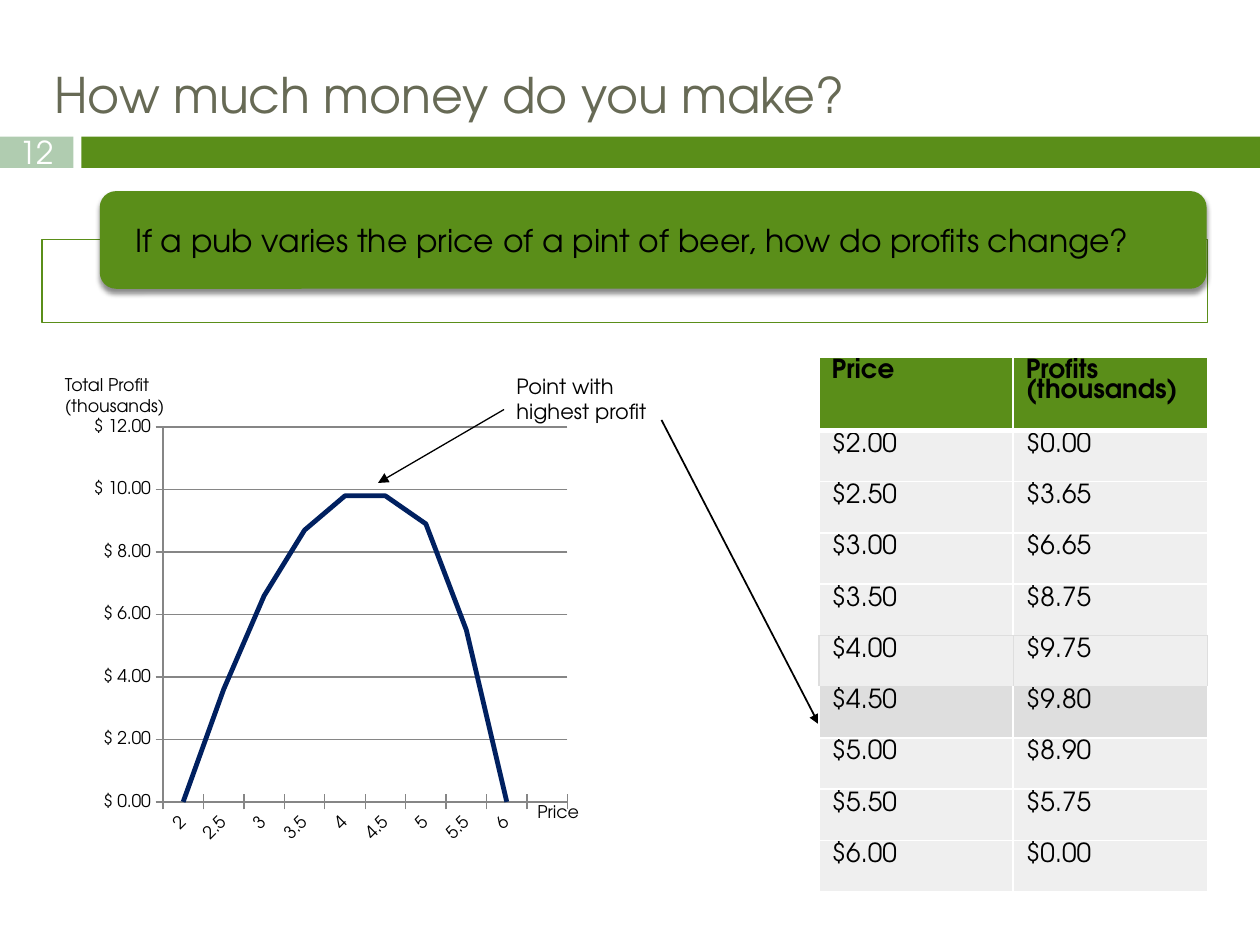
from dataclasses import dataclass

from lxml import etree
from pptx import Presentation
from pptx.chart.data import CategoryChartData
from pptx.dml.color import RGBColor
from pptx.enum.chart import XL_CHART_TYPE, XL_TICK_MARK
from pptx.enum.shapes import MSO_CONNECTOR, MSO_SHAPE
from pptx.enum.text import MSO_ANCHOR, MSO_AUTO_SIZE, PP_ALIGN
from pptx.oxml.ns import qn
from pptx.util import Pt

RECTANGLE, ROUNDED = MSO_SHAPE.RECTANGLE, MSO_SHAPE.ROUNDED_RECTANGLE
MIDDLE, TOP = MSO_ANCHOR.MIDDLE, MSO_ANCHOR.TOP
LEFT, CENTER = PP_ALIGN.LEFT, PP_ALIGN.CENTER
GROW = MSO_AUTO_SIZE.SHAPE_TO_FIT_TEXT
STRAIGHT = MSO_CONNECTOR.STRAIGHT
CROSS = XL_TICK_MARK.CROSS
LINE_CHART = XL_CHART_TYPE.LINE
TITLE_ONLY = 5
DOLLARS = '"$"\\ #,##0.00'


@dataclass(frozen=True)
class Theme:
    font: str = "TeX Gyre Adventor"
    green: str = "5A8E19"
    sage: str = "B0CCB0"
    olive: str = "676A55"
    navy: str = "002060"
    white: str = "FFFFFF"
    black: str = "000000"
    grid: str = "868686"
    cell: str = "EFEFEF"
    highlight: str = "DEDEDE"
    title_size: int = 28
    banner_size: int = 18
    table_size: int = 15
    note_size: int = 12
    label_size: int = 10


def apply(target, **values):
    for name, value in values.items():
        setattr(target, name, value)


def child(parent, tag, **attributes):
    return etree.SubElement(parent, qn(tag), attributes)


def paint(fill, color):
    fill.solid()
    fill.fore_color.rgb = RGBColor.from_string(color)


def stroke(line, color, width):
    paint(line.fill, color)
    line.width = Pt(width)


class SlideBuilder:
    def __init__(self, slide, theme):
        self.slide, self.theme = slide, theme

    def style(self, font, size, color, bold=False):
        apply(font, name=self.theme.font, size=Pt(size), bold=bold)
        font.color.rgb = RGBColor.from_string(color)

    def set_text(self, frame, text, size, color, align=LEFT, **frame_format):
        frame.text = text
        apply(frame, **frame_format)
        paragraph = frame.paragraphs[0]
        paragraph.alignment = align
        self.style(paragraph.font, size, color)

    def title(self, text, left, top, width, height):
        title = self.slide.shapes.title
        apply(title, left=Pt(left), top=Pt(top), width=Pt(width), height=Pt(height))
        self.set_text(title.text_frame, text, self.theme.title_size,
                      self.theme.olive, vertical_anchor=MIDDLE)

    def block(self, preset, left, top, width, height, color, outline=None):
        block = self.slide.shapes.add_shape(preset, Pt(left), Pt(top), Pt(width), Pt(height))
        block.shadow.inherit = False
        paint(block.fill, color)
        if outline:
            stroke(block.line, outline, 0.79)
        else:
            block.line.fill.background()
        return block

    def drop_shadow(self, block):
        effects = block._element.spPr.find(qn("a:effectLst"))
        shadow = child(effects, "a:outerShdw", blurRad=str(Pt(3)), dist=str(Pt(2.4)),
                       dir="5400000", rotWithShape="0")
        child(child(shadow, "a:srgbClr", val=self.theme.black), "a:alpha", val="45000")

    def label(self, text, left, top, width, height, size, wrap=True):
        box = self.slide.shapes.add_textbox(Pt(left), Pt(top), Pt(width), Pt(height))
        self.set_text(box.text_frame, text, size, self.theme.black,
                      word_wrap=wrap, auto_size=GROW)

    def arrow(self, start, end, width):
        arrow = self.slide.shapes.add_connector(STRAIGHT, *map(Pt, start + end))
        stroke(arrow.line, self.theme.black, width)
        child(arrow.line._get_or_add_ln(), "a:tailEnd", type="triangle")
        child(arrow._element.spPr, "a:effectLst")

    def borders(self, cell, edges):
        """Draw cell edges, given as {side: (color, width)} in L, R, T, B order."""
        properties = cell._tc.get_or_add_tcPr()
        for side, (color, width) in edges.items():
            line = child(properties, f"a:ln{side}", w=str(Pt(width)))
            child(child(line, "a:solidFill"), "a:srgbClr", val=color)

    def table(self, rows, left, top, width, header_height, row_height, framed, shaded):
        """Build a two-tone table with one outlined and one shaded row."""
        theme = self.theme
        height = header_height + row_height * (len(rows) - 1)
        table = self.slide.shapes.add_table(
            len(rows), len(rows[0]), Pt(left), Pt(top), Pt(width), Pt(height)).table
        plain, thick, grey = (theme.white, 1), (theme.white, 3), (theme.highlight, 0.75)
        for index, values in enumerate(rows):
            header = index == 0
            table.rows[index].height = Pt(header_height if header else row_height)
            side = grey if index == framed else plain
            above = grey if index in (framed, framed + 1) else thick if index == 1 else plain
            below = grey if index in (framed - 1, framed) else thick if header else plain
            color = theme.green if header else theme.highlight if index == shaded else theme.cell
            for column, value in enumerate(values):
                cell = table.cell(index, column)
                self.borders(cell, {"L": side, "R": side, "T": above, "B": below})
                paint(cell.fill, color)
                cell.vertical_anchor = TOP
                cell.text = value
                paragraph = cell.text_frame.paragraphs[0]
                paragraph.line_spacing = 0.8
                self.style(paragraph.font, theme.table_size, theme.black, bold=header)

    def line_chart(self, categories, values, left, top, width, height, plot):
        """Draw one line; plot is the inner area as fractions x, y, w, h."""
        theme = self.theme
        data = CategoryChartData()
        data.categories = categories
        data.add_series("Series 1", values)
        chart = self.slide.shapes.add_chart(
            LINE_CHART, Pt(left), Pt(top), Pt(width), Pt(height), data).chart
        apply(chart, has_legend=False, has_title=False)
        self.style(chart.font, theme.label_size, theme.black)
        chart.plots[0].vary_by_categories = False
        series = chart.plots[0].series[0]
        series.smooth = False
        stroke(series.format.line, theme.navy, 2.75)

        for axis in (chart.category_axis, chart.value_axis):
            axis.major_tick_mark = CROSS
            stroke(axis.format.line, theme.grid, 0.75)
            apply(axis.tick_labels, number_format=DOLLARS, number_format_is_linked=False)
            self.style(axis.tick_labels.font, theme.label_size, theme.black)
        chart.category_axis._element.txPr.find(qn("a:bodyPr")).set("rot", "-2700000")
        apply(chart.value_axis, minimum_scale=0, maximum_scale=12, major_unit=2)
        stroke(chart.value_axis.major_gridlines.format.line, theme.grid, 0.75)

        area = chart._chartSpace.chart.plotArea
        for old in area.findall(qn("c:layout")):
            area.remove(old)
        layout = etree.Element(qn("c:layout"))
        area.insert(0, layout)
        manual = child(layout, "c:manualLayout")
        child(manual, "c:layoutTarget", val="inner")
        for tag in ("xMode", "yMode"):
            child(manual, f"c:{tag}", val="edge")
        for tag, fraction in zip("xywh", plot):
            child(manual, f"c:{tag}", val=str(fraction))


def main():
    presentation = Presentation()
    apply(presentation, slide_width=Pt(720), slide_height=Pt(540))
    theme = Theme()
    slide = presentation.slides.add_slide(presentation.slide_layouts[TITLE_ONLY])
    builder = SlideBuilder(slide, theme)

    builder.block(RECTANGLE, 46.5, 78, 673.5, 18, theme.green)
    page_number = builder.block(RECTANGLE, 0, 78, 42, 18, theme.sage)
    builder.set_text(page_number.text_frame, "12", theme.banner_size, theme.white, CENTER,
                     vertical_anchor=MIDDLE, margin_top=0, margin_bottom=0)
    builder.title("How much money do you make?", 24, 30, 666, 47)

    builder.block(RECTANGLE, 24, 137, 666, 47.5, theme.white, theme.green)
    question = builder.block(ROUNDED, 57, 109.2, 632.5, 55.8, theme.green)
    builder.drop_shadow(question)
    builder.set_text(question.text_frame,
                     "If a pub varies the price of a pint of beer, how do profits change?",
                     theme.banner_size, theme.black, vertical_anchor=MIDDLE, word_wrap=True,
                     margin_left=Pt(17.5), margin_right=Pt(17.5), margin_top=0, margin_bottom=0)

    builder.label("Point with highest profit", 288, 210, 96, 36, theme.note_size)
    builder.arrow((378, 240), (468, 414), 1)

    prices = [2 + step / 2 for step in range(9)]
    profits = [0, 3.65, 6.65, 8.75, 9.75, 9.8, 8.9, 5.75, 0]
    rows = [("Price", "Profits (thousands)")]
    rows += [(f"${price:.2f}", f"${profit:.2f}") for price, profit in zip(prices, profits)]
    builder.table(rows, 468, 204, 222, 42, 29.3, framed=5, shaded=6)

    builder.line_chart([f"{price:g}" for price in prices] + [""],
                       [0, 3.6, 6.6, 8.7, 9.8, 9.8, 8.9, 5.5, 0, None],
                       48, 234, 282, 252, plot=(0.16, 0.04, 0.82, 0.85))
    builder.arrow((288, 234), (216, 276), 0.75)
    builder.label("Total Profit\v(thousands)", 30, 210, 72, 32, theme.label_size, wrap=False)
    builder.label("Price", 300, 454, 42, 19.5, theme.label_size, wrap=False)

    presentation.save("out.pptx")


if __name__ == "__main__":
    main()
